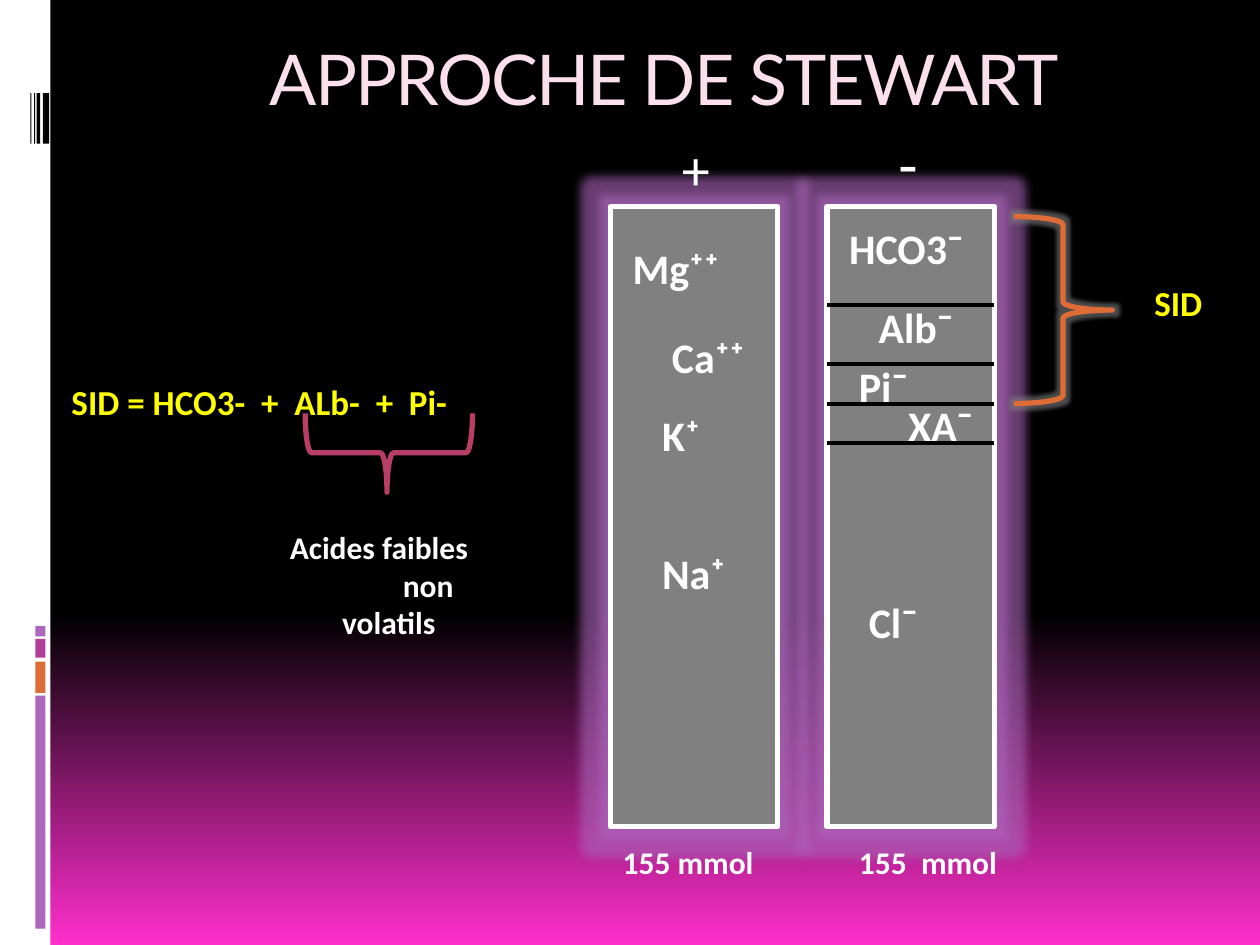
import pptx
import pptx.util
import pptx.dml.color
import pptx.enum.shapes
import pptx.enum.text
import pptx.oxml
import pptx.oxml.ns

SHAPE = pptx.enum.shapes.MSO_SHAPE
ALIGN = pptx.enum.text.PP_ALIGN
COLS = 128
WIDTH, HEIGHT = 10, 7.5
BAR_TOP, BAR_W, BAR_H = 21, 17, 63
PLUS_COL, MINUS_COL = 62, 84
NS = pptx.oxml.ns.nsdecls("a")


def grid(*units):
    """Turn grid units (1/128 of the slide width) into lengths."""
    return [pptx.util.Inches(u * WIDTH / COLS) for u in units]


def color(value):
    """Turn a hex string into a colour."""
    return pptx.dml.color.RGBColor.from_string(value)


def write(p, text, size=24, font="Calibri", fill="FFFFFF", bold=True, align=None):
    """Write one formatted run into a paragraph."""
    r = p.add_run()
    r.text = text
    r.font.size = pptx.util.Pt(size)
    r.font.name = font
    r.font.bold = bold
    r.font.color.rgb = color(fill)
    p.alignment = align
    return r


def add_label(shapes, text, col, row, width, size=24, indents=(), **fmt):
    """Add a text box with one paragraph per line of text."""
    lines = text.split("\n")
    height = (len(lines) * size * 1.22 / 72 + 0.1) * COLS / WIDTH
    tf = shapes.add_textbox(*grid(col, row, width, height)).text_frame
    tf.word_wrap = True
    tf.auto_size = pptx.enum.text.MSO_AUTO_SIZE.SHAPE_TO_FIT_TEXT
    for i, line in enumerate(lines):
        p = tf.paragraphs[0] if i == 0 else tf.add_paragraph()
        write(p, line, size=size, **fmt)
        if indents:
            p._p.get_or_add_pPr().set("marL", str(grid(indents[i])[0]))


def add_glow(sp, hex_color, radius, alpha):
    """Give a shape a soft glow."""
    effects = sp._element.spPr.find(pptx.oxml.ns.qn("a:effectLst"))
    effects.append(pptx.oxml.parse_xml(
        f'<a:glow {NS} rad="{pptx.util.Pt(radius)}"><a:srgbClr val="{hex_color}">'
        f'<a:alpha val="{alpha * 1000}"/></a:srgbClr></a:glow>'))


def add_figure(shapes, kind, box, fill=None, line=None):
    """Add a preset shape with an optional fill and a 3 point line."""
    sp = shapes.add_shape(kind, *box)
    sp.shadow.inherit = False
    if fill:
        sp.fill.solid()
        sp.fill.fore_color.rgb = color(fill)
    else:
        sp.fill.background()
    if line:
        sp.line.color.rgb = color(line)
        sp.line.width = pptx.util.Pt(3)
    else:
        sp.line.fill.background()
    return sp


def add_bar(shapes, col):
    """Add a glowing ion column."""
    box = grid(col, BAR_TOP, BAR_W, BAR_H)
    add_glow(add_figure(shapes, SHAPE.RECTANGLE, box, "808080", "FFFFFF"), "AC66BB", 11, 60)


def add_divider(shapes, row):
    """Add a horizontal line across the anion column."""
    cxn = shapes.add_connector(pptx.enum.shapes.MSO_CONNECTOR.STRAIGHT,
                               *grid(MINUS_COL, row, MINUS_COL + BAR_W, row))
    cxn.line.color.rgb = color("000000")
    cxn.line.width = pptx.util.Pt(2.25)
    cxn._element.spPr.append(pptx.oxml.parse_xml(f"<a:effectLst {NS}/>"))


def add_brace(shapes, kind, box, line, middle=0.5):
    """Add an unfilled brace."""
    sp = add_figure(shapes, kind, box, line=line)
    sp.adjustments[0] = 0.083
    sp.adjustments[1] = middle
    return sp


def set_background(s):
    """Fade the background from black to pink at the bottom."""
    fill = s.background.fill
    fill.gradient()
    fill.gradient_angle = 270
    for stop, (position, value) in zip(fill.gradient_stops, [(0.65, "000000"), (1, "FF2FCD")]):
        stop.position = position
        stop.color.rgb = color(value)


def add_side_strip(shapes):
    """Add the white side strip with its blocks and bars."""
    blocks = [(0, 0, 0.4, HEIGHT, "FFFFFF"), (0.28, 5.52, 0.08, 1.85, "AC66BB"),
              (0.28, 5.25, 0.08, 0.25, "DE6C36"), (0.28, 5.07, 0.08, 0.15, "B13F9A"),
              (0.28, 4.97, 0.08, 0.08, "AC66BB")]
    blocks += [(left, 0.74, width, 0.4, "000000") for left, width in
               [(0.34, 0.05), (0.29, 0.03), (0.27, 0.01), (0.24, 0.01)]]
    for *box, fill in blocks:
        add_figure(shapes, SHAPE.RECTANGLE, map(pptx.util.Inches, box), fill)


def set_title(sp, text):
    """Place and format the title."""
    sp.left, sp.top, sp.width, sp.height = map(pptx.util.Inches, (1.02, 0.23, 8.5, 0.7))
    tf = sp.text_frame
    tf.auto_size = pptx.enum.text.MSO_AUTO_SIZE.NONE
    tf.vertical_anchor = pptx.enum.text.MSO_ANCHOR.TOP
    r = write(tf.paragraphs[0], text, size=40, font="Lato", fill="FBE0EC",
              bold=False, align=ALIGN.CENTER)
    r.font._element.set("spc", "-100")


def main():
    """Build the slide."""
    prs = pptx.Presentation()
    prs.slide_width = pptx.util.Inches(WIDTH)
    prs.slide_height = pptx.util.Inches(HEIGHT)
    s = prs.slides.add_slide(prs.slide_layouts[5])
    shapes = s.shapes
    set_background(s)
    add_side_strip(shapes)
    set_title(shapes.title, "APPROCHE DE STEWART")

    add_bar(shapes, MINUS_COL)
    for row in (31, 37, 41, 45):
        add_divider(shapes, row)
    cations = shapes.add_group_shape().shapes
    add_bar(cations, PLUS_COL)
    for text, col, row, width in [("Na⁺", 66, 55, 11), ("K⁺", 66, 41, 11),
                                  ("Ca⁺⁺", 67, 33, 11), ("Mg⁺⁺", 63, 24, 15)]:
        add_label(cations, text, col, row, width)
    for text, col, row, width in [("HCO3¯", 85, 22, 18), ("Alb¯", 88, 30, 12),
                                  ("Pi¯", 86, 36, 10), ("Cl¯", 87, 60, 19),
                                  ("XA¯", 91, 40, 12)]:
        add_label(shapes, text, col, row, width)

    add_label(shapes, "+", 68, 13, 6, size=32, bold=False)
    add_label(shapes, "-", 90, 12, 7, size=36, bold=False)
    add_label(shapes, "155 mmol", PLUS_COL, 85, 19, size=18)
    add_label(shapes, "155  mmol", 86, 85, 26, size=18)

    brace = add_brace(shapes, SHAPE.RIGHT_BRACE, grid(103, 22, 10, 19), "DE6C36")
    add_glow(brace, "808080", 5, 60)
    add_label(shapes, "SID", 116, 28, 12, size=20, fill="FFFF00")
    add_label(shapes, "SID = HCO3-  +  ALb-  +  Pi-", 6, 38, 47, size=20, fill="FFFF00")
    brace = add_brace(shapes, SHAPE.LEFT_BRACE, grid(35.5, 37.5, 8, 17), "B83D68", 0.489)
    brace.rotation = 270
    add_label(shapes, "Acides faibles\nnon\nvolatils", 27, 53, 23, size=18,
              indents=(0, 10, 2), align=ALIGN.CENTER)
    prs.save("out.pptx")


if __name__ == "__main__":
    main()
